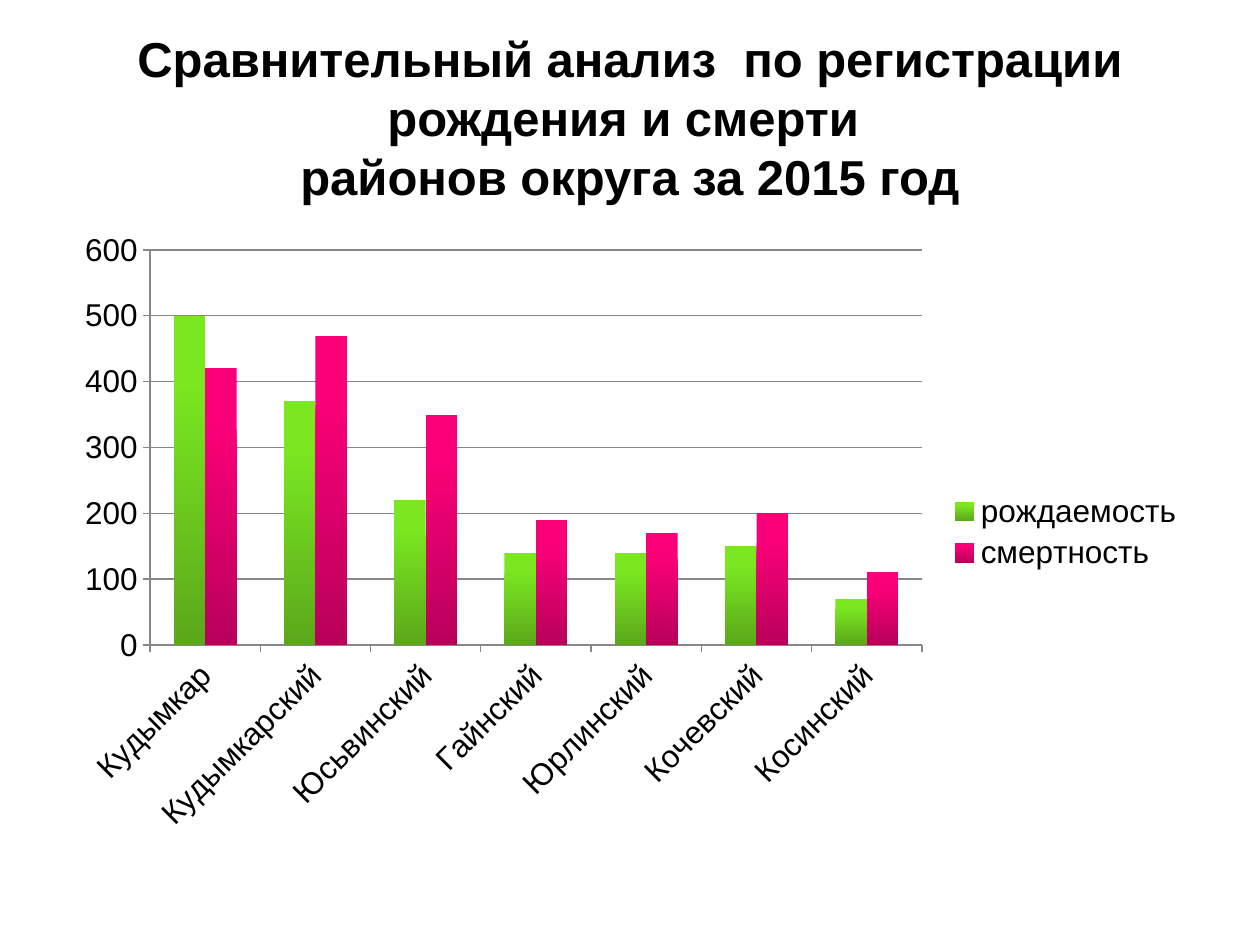
from lxml.etree import SubElement
from pptx import Presentation
from pptx.chart.data import CategoryChartData
from pptx.dml.color import RGBColor
from pptx.enum.chart import XL_CHART_TYPE, XL_LEGEND_POSITION, XL_TICK_MARK
from pptx.enum.text import MSO_ANCHOR, PP_ALIGN
from pptx.oxml.ns import qn
from pptx.util import Emu, Pt

SCALE = 914400 // 126
COLORS = {
    "text": "000000",
    "grid": "878787",
    "births": ("7AE720", "5BA81B"),
    "deaths": ("FA0078", "B8005A"),
}
TITLE = ["Сравнительный анализ  по регистрации рождения и смерти ",
         "районов округа за 2015 год"]
AREAS = ["Кудымкар", "Кудымкарский", "Юсьвинский", "Гайнский",
         "Юрлинский", "Кочевский", "Косинский"]
SERIES = [
    ("рождаемость", "births", [500, 370, 220, 140, 140, 150, 70]),
    ("смертность", "deaths", [420, 470, 350, 190, 170, 200, 110]),
]


def px(*sizes):
    return [Emu(size * SCALE) for size in sizes]


def color(code):
    return RGBColor.from_string(code)


class Deck:
    face = "Arial"

    def __init__(self, width, height):
        self.file = Presentation()
        self.file.slide_width, self.file.slide_height = px(width, height)
        self.slide = self.file.slides.add_slide(self.file.slide_layouts[6])

    def style(self, font, size, bold=False):
        font.name = self.face
        font.size = Pt(size)
        font.bold = bold
        font.color.rgb = color(COLORS["text"])

    def title(self, box, lines, size):
        frame = self.slide.shapes.add_textbox(*px(*box)).text_frame
        frame.word_wrap = True
        frame.vertical_anchor = MSO_ANCHOR.MIDDLE
        para = frame.paragraphs[0]
        para.alignment = PP_ALIGN.CENTER
        for index, line in enumerate(lines):
            if index:
                para.add_line_break()
            run = para.add_run()
            run.text = line
            self.style(run.font, size, True)

    def axis(self, axis, size):
        axis.major_tick_mark = XL_TICK_MARK.OUTSIDE
        axis.minor_tick_mark = XL_TICK_MARK.NONE
        self.line(axis.format.line)
        self.style(axis.tick_labels.font, size)

    def line(self, line):
        line.color.rgb = color(COLORS["grid"])
        line.width = Pt(0.75)

    def place(self, chart, box, plot):
        left, top, width, height = box
        x, y, wide, high = plot
        parts = ((x - left) / width, (y - top) / height,
                 wide / width, high / height)
        area = chart._chartSpace.chart.plotArea
        old = area.find(qn("c:layout"))
        if old is not None:
            area.remove(old)
        layout = area.makeelement(qn("c:layout"))
        area.insert(0, layout)
        manual = SubElement(layout, qn("c:manualLayout"))
        pairs = [("layoutTarget", "inner"), ("xMode", "edge"), ("yMode", "edge")]
        for tag, value in pairs + list(zip("xywh", parts)):
            SubElement(manual, qn(f"c:{tag}")).set("val", str(value))

    def columns(self, box, plot, areas, series, size):
        data = CategoryChartData()
        data.categories = areas
        for name, _, values in series:
            data.add_series(name, values)
        chart = self.slide.shapes.add_chart(
            XL_CHART_TYPE.COLUMN_CLUSTERED, *px(*box), data).chart
        self.style(chart.font, size)
        chart.has_title = False
        chart.has_legend = True
        chart.legend.position = XL_LEGEND_POSITION.RIGHT
        chart.legend.include_in_layout = False
        self.style(chart.legend.font, size)
        self.axis(chart.category_axis, size)
        self.axis(chart.value_axis, size)
        labels = chart.category_axis._element.find(qn("c:txPr"))
        labels.find(qn("a:bodyPr")).set("rot", "-2700000")
        chart.value_axis.minimum_scale = 0
        chart.value_axis.maximum_scale = 600
        chart.value_axis.major_unit = 100
        chart.value_axis.has_major_gridlines = True
        self.line(chart.value_axis.major_gridlines.format.line)
        bars = chart.plots[0]
        bars.vary_by_categories = False
        bars.gap_width = 150
        bars.overlap = 0
        for item, (_, key, _) in zip(bars.series, series):
            item.invert_if_negative = False
            fill = item.format.fill
            fill.gradient()
            fill.gradient_angle = 270
            for stop, code, place in zip(fill.gradient_stops, COLORS[key], (0.2, 1)):
                stop.color.rgb = color(code)
                stop.position = place
        self.place(chart, box, plot)


def main():
    deck = Deck(1260, 945)
    deck.title((63, 38, 1134, 158), TITLE, 28)
    deck.columns((63, 220, 1134, 624), (150, 250, 772, 395),
                 AREAS, SERIES, 18)
    deck.file.save("out.pptx")


if __name__ == "__main__":
    main()
